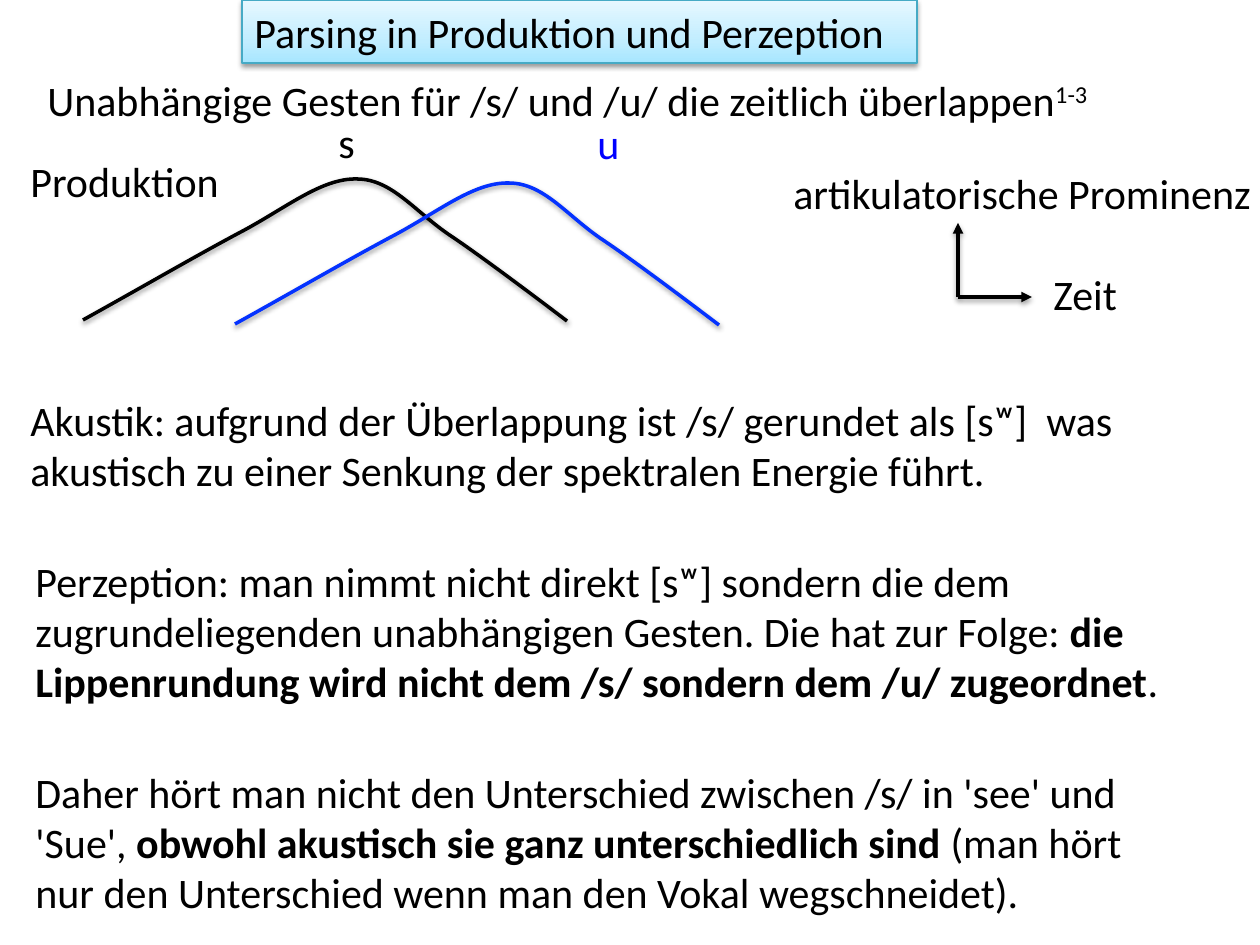
"""Build the slide on parsing in speech production and perception."""
from copy import deepcopy

from lxml import etree
from pptx import Presentation
from pptx import util as u
from pptx.dml.color import RGBColor
from pptx.enum import shapes, text
from pptx.oxml.ns import qn

PX = 914400 / 126
BLACK = RGBColor(0x00, 0x00, 0x00)
BLUE = RGBColor(0x00, 0x00, 0xFF)
CURVE_BLUE = RGBColor(0x04, 0x32, 0xFF)
TEAL = RGBColor(0x46, 0xAA, 0xC5)
GRADIENT = [
    (0, RGBColor(0xA7, 0xE6, 0xFF)),
    (0.35, RGBColor(0xC1, 0xED, 0xFF)),
    (1, RGBColor(0xE7, 0xF8, 0xFF)),
]

TITLE = ("Parsing in Produktion und Perzeption", (242, 0, 675, 63))
LABELS = [
    ("s", (326, 110, 69, 63), BLACK),
    ("u", (585, 111, 69, 63), BLUE),
]
NOTES = [
    ("Zeit", (1041, 262, 89, 63)),
    ("artikulatorische Prominenz", (781, 161, 488, 63)),
    ("Produktion", (18, 149, 215, 63)),
]
HEADING = (
    [("Unabhängige Gesten für /s/ und /u/ die zeitlich überlappen", ""), ("1-3", "super")],
    (35, 68, 1099, 63),
)
PARAGRAPHS = [
    ([("Akustik: aufgrund der Überlappung ist /s/ gerundet als [sʷ]  was akustisch "
       "zu einer Senkung der spektralen Energie führt.", "")],
     (18, 388, 1113, 115)),
    ([("Perzeption: man nimmt nicht direkt [sʷ] sondern die dem zugrundeliegenden "
       "unabhängigen Gesten. Die hat zur Folge: ", ""),
      ("die Lippenrundung wird nicht dem /s/ sondern dem /u/ zugeordnet", "bold"),
      (".", "")],
     (23, 549, 1163, 165)),
    ([("Daher hört man nicht den Unterschied zwischen /s/ in 'see' und 'Sue', ", ""),
      ("obwohl akustisch sie ganz unterschiedlich sind ", "bold"),
      ("(man hört nur den Unterschied wenn man den Vokal wegschneidet).", "")],
     (23, 760, 1143, 165)),
]
GESTURE = [
    (83, 320), (139, 289), (194, 257), (239, 233), (285, 209), (321, 178), (357, 179),
    (392, 179), (415, 212), (451, 236), (487, 260), (567, 321), (567, 321),
]
GESTURES = [((0, 0), BLACK), ((152, 4), CURVE_BLUE)]
ORIGIN = (958, 297)
AXIS_ENDS = [(958, 223), (1032, 297)]


def emu(*lengths):
    return [round(n * PX) for n in lengths]


def write(sp, content, color=BLACK, wrap=True):
    tf = sp.text_frame
    tf.word_wrap = wrap
    tf.auto_size = text.MSO_AUTO_SIZE.SHAPE_TO_FIT_TEXT
    p = tf.paragraphs[0]
    p.alignment = text.PP_ALIGN.LEFT
    runs = [(content, "")] if isinstance(content, str) else content
    for words, style in runs:
        r = p.add_run()
        r.text = words
        r.font.name = "Calibri"
        r.font.size = u.Pt(24)
        r.font.color.rgb = color
        if style == "bold":
            r.font.bold = True
        elif style == "super":
            r.font._element.set("baseline", "30000")


def add_text(slide, content, box, **style):
    write(slide.shapes.add_textbox(*emu(*box)), content, **style)


def outline(sp, color, width):
    sp.line.color.rgb = color
    sp.line.width = u.Pt(width)
    effects = etree.SubElement(sp._element.spPr, qn("a:effectLst"))
    shadow = etree.SubElement(
        effects, qn("a:outerShdw"), blurRad=str(u.Pt(3.1)), dist=str(u.Pt(1.6)),
        dir="5400000", rotWithShape="0")
    tint = etree.SubElement(shadow, qn("a:srgbClr"), val=str(BLACK))
    etree.SubElement(tint, qn("a:alpha"), val="38000")


def add_title(slide, content, box):
    sp = slide.shapes.add_shape(shapes.MSO_SHAPE.RECTANGLE, *emu(*box))
    sp.fill.gradient()
    sp.fill.gradient_angle = 90
    stops = sp._element.spPr.find(".//" + qn("a:gsLst"))
    stops.insert(1, deepcopy(stops[0]))
    for stop, (position, color) in zip(sp.fill.gradient_stops, GRADIENT):
        stop.position = position
        stop.color.rgb = color
    outline(sp, TEAL, 0.75)
    write(sp, content)


def add_gesture(slide, offset, color):
    dx, dy = offset
    points = [(x + dx, y + dy) for x, y in GESTURE]
    builder = slide.shapes.build_freeform(*points[0], scale=PX)
    builder.add_line_segments(points[1:], close=False)
    sp = builder.convert_to_shape()
    track = sp._element.spPr.find(".//" + qn("a:path"))
    segments = list(track)[1:]
    for i in range(0, len(segments), 3):
        bezier = etree.SubElement(track, qn("a:cubicBezTo"))
        for segment in segments[i:i + 3]:
            bezier.append(segment[0])
            track.remove(segment)
    sp.fill.background()
    outline(sp, color, 2)


def add_axis(slide, end):
    axis = slide.shapes.add_connector(shapes.MSO_CONNECTOR.STRAIGHT, *emu(*ORIGIN, *end))
    outline(axis, BLACK, 2)
    etree.SubElement(axis._element.spPr.find(qn("a:ln")), qn("a:tailEnd"), type="triangle")


def main():
    prs = Presentation()
    prs.slide_width, prs.slide_height = emu(1260, 945)
    slide = prs.slides.add_slide(prs.slide_layouts[6])
    add_title(slide, *TITLE)
    for offset, color in GESTURES:
        add_gesture(slide, offset, color)
    for content, box, color in LABELS:
        add_text(slide, content, box, color=color)
    for end in AXIS_ENDS:
        add_axis(slide, end)
    for content, box in NOTES + [HEADING]:
        add_text(slide, content, box, wrap=False)
    for content, box in PARAGRAPHS:
        add_text(slide, content, box)
    prs.save("out.pptx")


if __name__ == "__main__":
    main()
